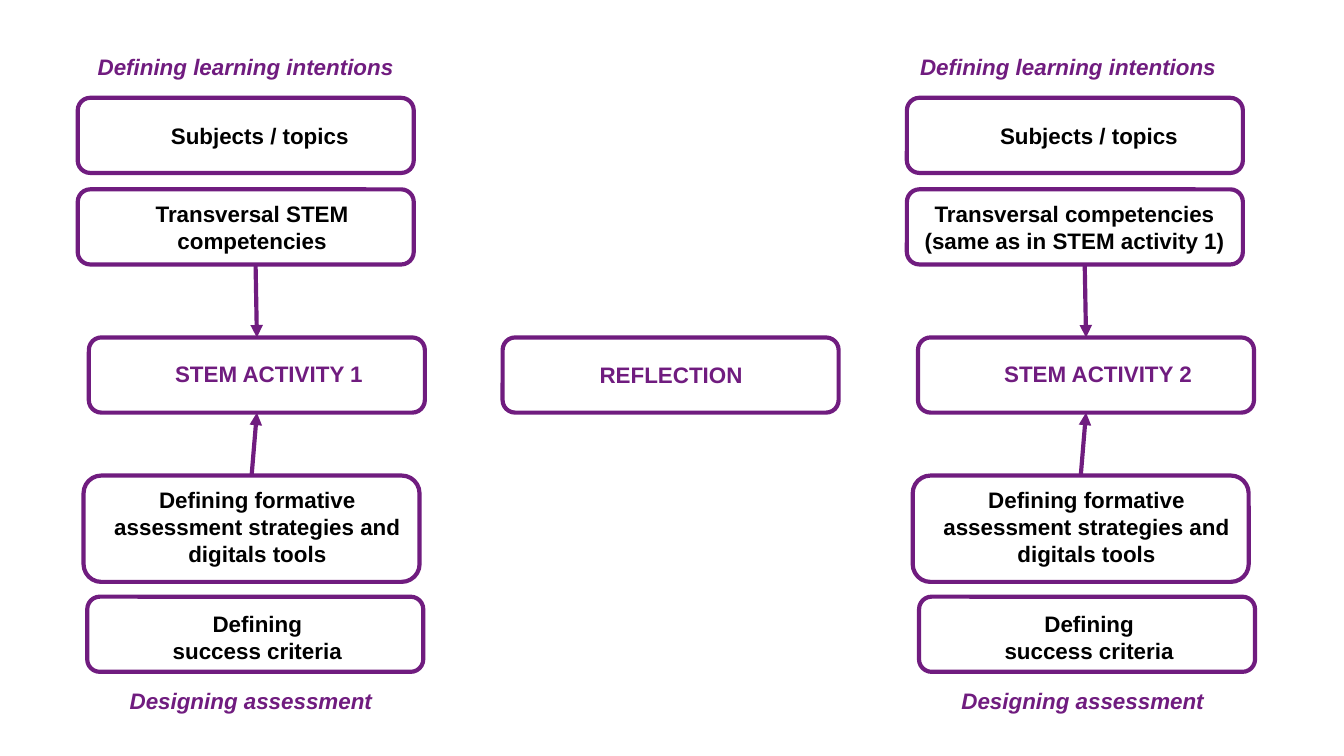
from dataclasses import dataclass

from lxml import etree
from pptx import Presentation
from pptx.dml.color import RGBColor
from pptx.enum import shapes, text
from pptx.oxml.ns import qn
from pptx.util import Cm, Pt

COLORS = {"purple": "701C7F", "black": "000000"}
BOX_WIDTH = 6.35
ROW_HEIGHT = 1.42
COLUMN_STEP = 15.67
INSET = 0.25


@dataclass(frozen=True)
class Label:
    """A line of text; lengths in centimetres."""
    words: str
    left: float
    top: float
    width: float = 6.27
    height: float = 1.02
    color: str = "black"
    italic: bool = False
    align: text.PP_ALIGN = text.PP_ALIGN.CENTER
    indent: float = INSET


@dataclass(frozen=True)
class Card:
    """A rounded box with its label; lengths in centimetres."""
    left: float
    top: float
    label: Label
    height: float = ROW_HEIGHT


@dataclass(frozen=True)
class Column:
    left: float
    activity: str
    competencies: Label
    heading_align: text.PP_ALIGN
    closing_shift: float


def color(name: str) -> RGBColor:
    return RGBColor.from_string(COLORS[name])


def add_label(page, label: Label, origin: float = 0):
    box = page.shapes.add_textbox(Cm(origin + label.left), Cm(label.top),
                                  Cm(label.width), Cm(label.height))
    frame = box.text_frame
    frame.word_wrap = True
    frame.margin_top = frame.margin_bottom = frame.margin_right = Cm(INSET)
    frame.margin_left = Cm(label.indent)
    frame.text = label.words
    for para in frame.paragraphs:
        para.alignment = label.align
        for span in para.runs:
            span.font.name = "Arial"
            span.font.size = Pt(12)
            span.font.bold = True
            span.font.italic = label.italic
            span.font.color.rgb = color(label.color)


def add_card(page, card: Card, origin: float = 0):
    box = page.shapes.add_shape(shapes.MSO_SHAPE.ROUNDED_RECTANGLE,
                                Cm(origin + card.left), Cm(card.top),
                                Cm(BOX_WIDTH), Cm(card.height))
    box.shadow.inherit = False
    box.fill.background()
    box.line.color.rgb = color("purple")
    box.line.width = Pt(2.25)
    add_label(page, card.label, origin)
    return box


def add_arrow(page, left: float, top: float, target, site: int):
    """Draw an arrow from a point to a connection site of the target."""
    arrow = page.shapes.add_connector(shapes.MSO_CONNECTOR.STRAIGHT,
                                      Cm(left), Cm(top), Cm(left), Cm(top))
    arrow.end_connect(target, site)
    arrow.line.color.rgb = color("purple")
    arrow.line.width = Pt(2.25)
    etree.SubElement(arrow.line._get_or_add_ln(), qn("a:tailEnd"), type="triangle")
    etree.SubElement(arrow._element.spPr, qn("a:effectLst"))
    return arrow


def add_column(page, column: Column):
    left = column.left
    closing = left + column.closing_shift
    add_label(page, Label("Defining learning intentions", 1.47, 0.76, BOX_WIDTH, 0.79,
                          "purple", True, column.heading_align), left)
    add_card(page, Card(1.47, 1.85, Label("Subjects / topics", 2.39, 2.06, 4.55,
                                          align=text.PP_ALIGN.LEFT, indent=0.84)), left)
    add_card(page, Card(1.47, 3.58, column.competencies), left)
    activity = add_card(page, Card(1.68, 6.38, Label(column.activity, 1.95, 6.55,
                                                     color="purple")), left)
    strategies = add_card(page, Card(1.58, 8.99, Label(
        "Defining formative assessment strategies and digitals tools", 1.73, 8.94), 2.01), left)
    add_card(page, Card(1.65, 11.28, Label("Defining\vsuccess criteria", 1.73, 11.28)), closing)
    add_label(page, Label("Designing assessment", 1.57, 12.73, BOX_WIDTH, 0.79,
                          "purple", True), closing)
    add_arrow(page, left + 4.83, 5.0, activity, 0)
    add_arrow(page, left + 4.83, 8.99, activity, 2).begin_connect(strategies, 0)


COLUMNS = [
    Column(0, "STEM ACTIVITY 1", Label("Transversal STEM competencies", 1.63, 3.53),
           text.PP_ALIGN.CENTER, 0),
    Column(COLUMN_STEP, "STEM ACTIVITY 2",
           Label("Transversal competencies (same as in STEM activity 1)", 1.35, 3.53, 6.58),
           text.PP_ALIGN.LEFT, 0.05),
]


def main():
    deck = Presentation()
    deck.slide_width, deck.slide_height = Cm(25.4), Cm(14.29)
    page = deck.slides.add_slide(deck.slide_layouts[6])
    for column in COLUMNS:
        add_column(page, column)
    add_card(page, Card(9.5, 6.38, Label("REFLECTION", 10.41, 6.58, 4.55, color="purple")))
    deck.save("out.pptx")


if __name__ == "__main__":
    main()
